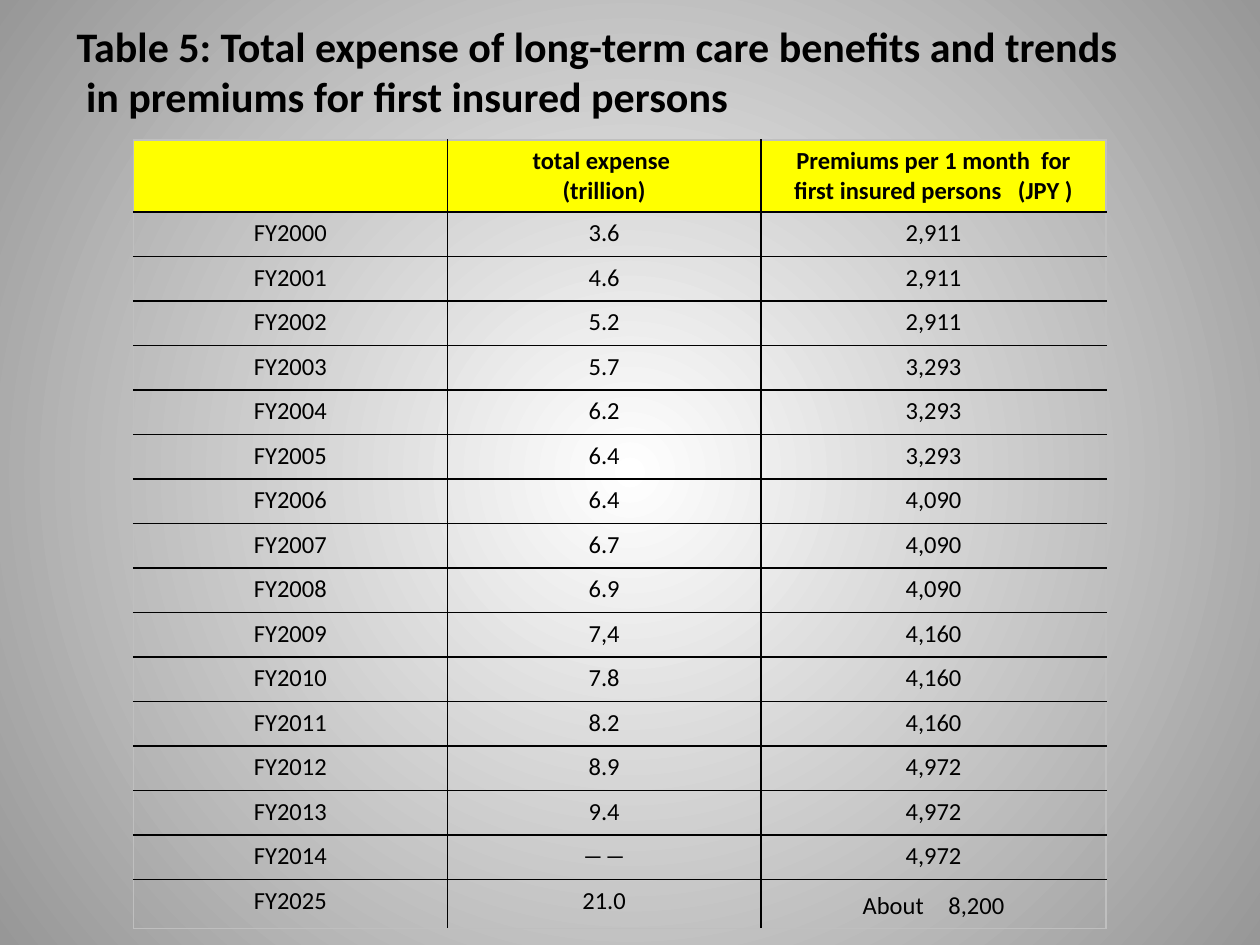
from dataclasses import dataclass

from lxml import etree
from pptx import Presentation
from pptx.dml.color import RGBColor
from pptx.enum.text import MSO_ANCHOR, PP_ALIGN
from pptx.oxml.ns import qn
from pptx.util import Inches, Pt

CENTER, LEFT = PP_ALIGN.CENTER, PP_ALIGN.LEFT
TOP = MSO_ANCHOR.TOP


@dataclass(frozen=True)
class Theme:
    font: str = "Calibri"
    title_size: int = 24
    table_size: int = 14
    text: str = "000000"
    header_fill: str = "FFFF00"
    grid: str = "000000"
    frame: str = "BFBFBF"
    line_width: int = 1
    glow: tuple = ("FFFFFF", "979797")


THEME = Theme()

TITLE = [
    "Table 5: Total expense of long-term care benefits and trends",
    " in premiums for first insured persons",
]
HEADER = [
    "",
    "total expense \n(trillion)",
    "Premiums per 1 month  for first insured persons   (JPY )",
]
EXPENSES = ["3.6", "4.6", "5.2", "5.7", "6.2", "6.4", "6.4", "6.7",
            "6.9", "7,4", "7.8", "8.2", "8.9", "9.4", "――", "21.0"]
PREMIUMS = (["2,911"] * 3 + ["3,293"] * 3 + ["4,090"] * 3
            + ["4,160"] * 3 + ["4,972"] * 3 + ["About\u30008,200".replace("\u3000", "　")])
YEARS = [f"FY{year}" for year in [*range(2000, 2015), 2025]]

COLUMN_WIDTHS = [Inches(2.49), Inches(2.49), Inches(2.74)]
HEADER_HEIGHT, LAST_HEIGHT = Inches(0.57), Inches(0.39)


def write_lines(frame, lines, size, bold, align):
    frame.text = "\n".join(lines)
    for paragraph in frame.paragraphs:
        paragraph.alignment = align
        font = paragraph.font
        for run in paragraph.runs:
            font = run.font
            font.color.rgb = RGBColor.from_string(THEME.text)
        for name, value in {"name": THEME.font, "size": Pt(size), "bold": bold}.items():
            setattr(font, name, value)


def set_border(cell, side, color):
    """Draw one cell side, named L, R, T or B."""
    line = etree.SubElement(cell._tc.get_or_add_tcPr(), qn(f"a:ln{side}"),
                            w=str(Pt(THEME.line_width)))
    fill = etree.SubElement(line, qn("a:solidFill"))
    etree.SubElement(fill, qn("a:srgbClr"), val=color)


def paint_background(slide):
    """Radial gradient from the centre of the slide outwards."""
    fill = slide.background.fill
    fill.gradient()
    for stop, color in zip(fill.gradient_stops, THEME.glow):
        stop.color.rgb = RGBColor.from_string(color)
    gradient = slide.element.find(".//" + qn("a:gradFill"))
    gradient.remove(gradient.find(qn("a:lin")))
    circle = etree.SubElement(gradient, qn("a:path"), {"path": "circle"})
    etree.SubElement(circle, qn("a:fillToRect"), dict.fromkeys("ltrb", "50000"))


def add_title(slide, left, top, width, height):
    frame = slide.shapes.add_textbox(left, top, width, height).text_frame
    frame.word_wrap = True
    write_lines(frame, TITLE, THEME.title_size, True, LEFT)


def add_expense_table(slide, left, top, width, height):
    rows = [HEADER, *zip(YEARS, EXPENSES, PREMIUMS)]
    last_row, last_column = len(rows) - 1, len(HEADER) - 1
    table = slide.shapes.add_table(len(rows), len(HEADER), left, top, width, height).table
    table.first_row = table.horz_banding = False

    for column, column_width in zip(table.columns, COLUMN_WIDTHS):
        column.width = column_width
    year_height = (height - HEADER_HEIGHT - LAST_HEIGHT) // (last_row - 1)
    heights = [HEADER_HEIGHT, *[year_height] * (last_row - 1), LAST_HEIGHT]
    for row, row_height in zip(table.rows, heights):
        row.height = row_height

    for r, values in enumerate(rows):
        for c, value in enumerate(values):
            cell = table.cell(r, c)
            cell.vertical_anchor = TOP
            write_lines(cell.text_frame, value.split("\n"), THEME.table_size, r == 0, CENTER)
            outer = {"L": c == 0, "R": c == last_column, "T": r == 0, "B": r == last_row}
            for side, is_outer in outer.items():
                set_border(cell, side, THEME.frame if is_outer else THEME.grid)
            if r == 0:
                cell.fill.solid()
                cell.fill.fore_color.rgb = RGBColor.from_string(THEME.header_fill)
            else:
                cell.fill.background()


def main():
    deck = Presentation()
    deck.slide_width, deck.slide_height = Inches(10), Inches(7.5)
    slide = deck.slides.add_slide(deck.slide_layouts[6])
    paint_background(slide)
    add_expense_table(slide, Inches(1.06), Inches(1.11), sum(COLUMN_WIDTHS), Inches(6.26))
    add_title(slide, Inches(0.51), Inches(0.11), Inches(9.21), Inches(0.91))
    deck.save("out.pptx")


if __name__ == "__main__":
    main()
